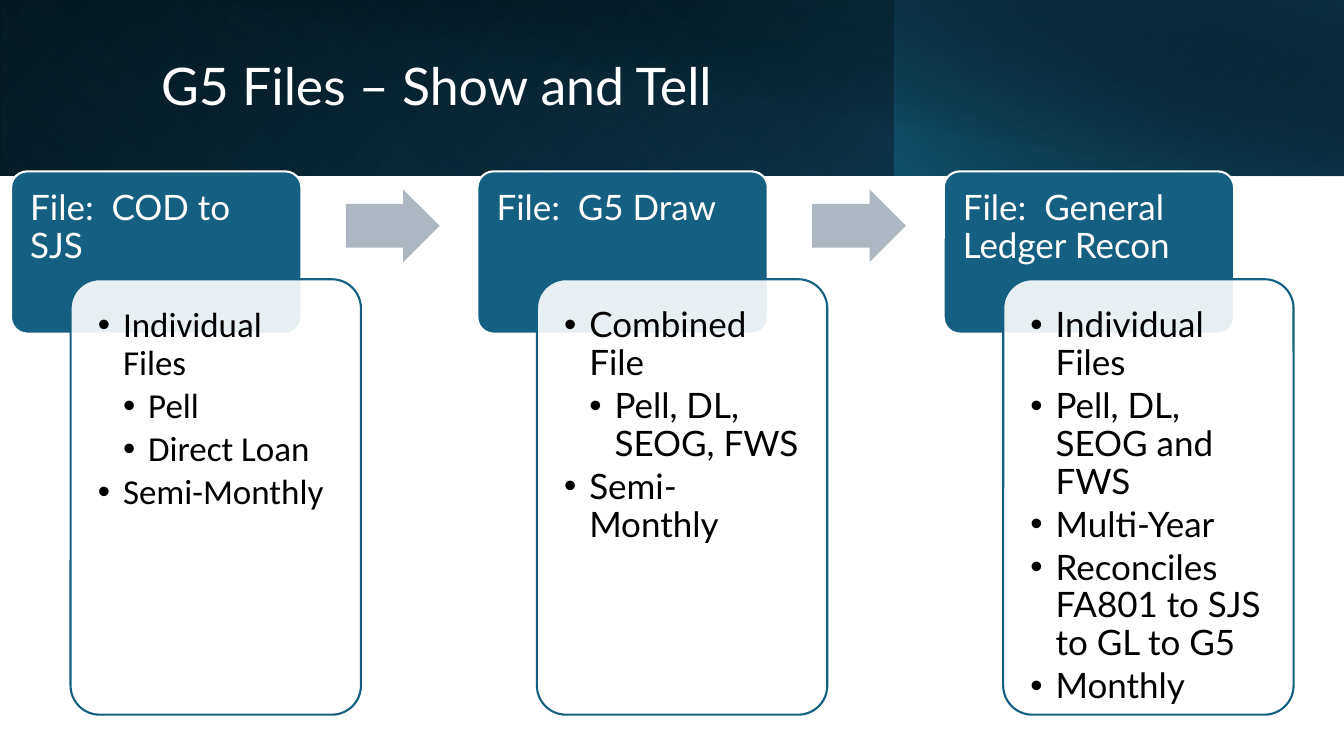
from dataclasses import dataclass

from lxml.etree import SubElement
from pptx import Presentation
from pptx.dml.color import RGBColor
from pptx.enum.shapes import MSO_SHAPE
from pptx.enum.text import MSO_ANCHOR
from pptx.oxml.ns import qn
from pptx.util import Inches, Pt


@dataclass(frozen=True)
class Theme:
    white: str = "FFFFFF"
    black: str = "000000"
    blue: str = "156082"
    deep_blue: str = "104862"
    navy: str = "0B3041"
    arrow: str = "ACB7C1"
    heading_font: str = "Lato"
    title_size: int = 37
    text_size: int = 25
    outline: float = 1.5


THEME = Theme()
FIRST_LEFT = 0.11
COLUMN_PITCH = 4.625

BANNER = [
    ((0, 0, 13.33, 1.74), True, 0, 140,
     [(0, THEME.black, 100), (100, THEME.deep_blue, 100)]),
    ((0, 0, 8.88, 1.74), True, 180, 230,
     [(20, THEME.blue, 0), (100, THEME.navy, 55)]),
    ((8.87, 0, 4.46, 1.74), True, 0, 220,
     [(0, THEME.blue, 66), (100, THEME.black, 30)]),
    ((0.5, 0, 12.83, 1.75), False, 0, 280,
     [(50, THEME.black, 0), (99, THEME.navy, 52)]),
]

COLUMNS = [
    ("File:  COD to SJS", "Calibri",
     [(1, "Individual Files"), (2, "Pell"), (2, "Direct Loan"), (1, "Semi-Monthly")]),
    ("File:  G5 Draw", "Lato",
     [(1, "Combined File"), (2, "Pell, DL, SEOG, FWS"), (1, "Semi-Monthly")]),
    ("File:  General Ledger Recon", "Lato",
     [(1, "Individual Files"), (1, "Pell, DL, SEOG and FWS"), (1, "Multi-Year"),
      (1, "Reconciles FA801 to SJS to GL to G5"), (1, "Monthly")]),
]


def color(value):
    return RGBColor.from_string(value)


def add_alpha(color_element, percent):
    SubElement(color_element, qn("a:alpha")).set("val", str(percent * 1000))


def add_box(slide, kind, box, fill, line=None, adjustments=(), opacity=100):
    shape = slide.shapes.add_shape(kind, *map(Inches, box))
    shape.shadow.inherit = False
    for index, value in enumerate(adjustments):
        shape.adjustments[index] = value
    shape.fill.solid()
    shape.fill.fore_color.rgb = color(fill)
    if opacity < 100:
        solid = shape.element.spPr.find(qn("a:solidFill"))
        add_alpha(solid[0], opacity)
    if line:
        shape.line.color.rgb = color(line)
        shape.line.width = Pt(THEME.outline)
    else:
        shape.line.fill.background()
    return shape


def add_gradient_box(slide, box, flipped, rotation, angle, stops):
    shape = add_box(slide, MSO_SHAPE.RECTANGLE, box, THEME.navy)
    shape.rotation = rotation
    if flipped:
        shape.element.spPr.xfrm.set("flipH", "1")
    shape.fill.gradient()
    gradient = shape.element.spPr.find(qn("a:gradFill"))
    for child in list(gradient):
        gradient.remove(child)
    stop_list = SubElement(gradient, qn("a:gsLst"))
    for position, value, opacity in stops:
        stop = SubElement(stop_list, qn("a:gs"))
        stop.set("pos", str(position * 1000))
        stop_color = SubElement(stop, qn("a:srgbClr"))
        stop_color.set("val", value)
        if opacity < 100:
            add_alpha(stop_color, opacity)
    SubElement(gradient, qn("a:lin")).set("ang", str(angle * 60000))


def add_text(slide, box, items, font, size, value, margins,
             space_after=0, anchor=MSO_ANCHOR.TOP):
    text_frame = slide.shapes.add_textbox(*map(Inches, box)).text_frame
    text_frame.word_wrap = True
    text_frame.vertical_anchor = anchor
    (text_frame.margin_left, text_frame.margin_top,
     text_frame.margin_right, text_frame.margin_bottom) = map(Inches, margins)
    text_frame.text = "\n".join(text for level, text in items)
    for paragraph, (level, text) in zip(text_frame.paragraphs, items):
        format_paragraph(paragraph, level, space_after)
        run_font = paragraph.runs[0].font
        run_font.name = font
        run_font.size = Pt(size)
        run_font.color.rgb = color(value)


def format_paragraph(paragraph, level, space_after):
    paragraph.line_spacing = 0.9
    paragraph.level = level
    properties = paragraph._p.get_or_add_pPr()
    if space_after:
        spacing = SubElement(properties, qn("a:spcAft"))
        SubElement(spacing, qn("a:spcPct")).set("val", str(space_after * 1000))
    if level:
        properties.set("marL", str(Inches(0.25 * level)))
        properties.set("indent", str(Inches(-0.25)))
        SubElement(properties, qn("a:buFont")).set("typeface", "Arial")
        SubElement(properties, qn("a:buChar")).set("char", "•")


def add_column(slide, left, heading, font, bullets):
    add_box(slide, MSO_SHAPE.ROUNDED_RECTANGLE, (left, 1.7, 2.88, 1.61),
            THEME.blue, THEME.white, [0.1])
    add_text(slide, (left, 1.7, 2.88, 1.07), [(0, heading)], THEME.heading_font,
             THEME.text_size, THEME.white, (0.19, 0.19, 0.19, 0.1), 35)
    add_box(slide, MSO_SHAPE.ROUNDED_RECTANGLE, (left + 0.59, 2.77, 2.88, 4.32),
            THEME.white, THEME.blue, [0.1], 90)
    add_text(slide, (left + 0.67, 2.86, 2.71, 4.15), bullets, font,
             THEME.text_size, THEME.black, (0.19, 0.19, 0.19, 0.19), 15)


def main():
    presentation = Presentation()
    presentation.slide_width = Inches(13.33)
    presentation.slide_height = Inches(7.5)
    slide = presentation.slides.add_slide(presentation.slide_layouts[6])
    for panel in BANNER:
        add_gradient_box(slide, *panel)
    add_text(slide, (1.5, 0.32, 10.82, 1.13), [(0, "G5 Files – Show and Tell")],
             THEME.heading_font, THEME.title_size, THEME.white,
             (0.1, 0.05, 0.1, 0.05), anchor=MSO_ANCHOR.MIDDLE)
    for index, column in enumerate(COLUMNS):
        left = FIRST_LEFT + index * COLUMN_PITCH
        add_column(slide, left, *column)
        if index < len(COLUMNS) - 1:
            add_box(slide, MSO_SHAPE.RIGHT_ARROW, (left + 3.32, 1.88, 0.93, 0.72),
                    THEME.arrow, adjustments=[0.6, 0.5])
    presentation.save("out.pptx")


if __name__ == "__main__":
    main()
